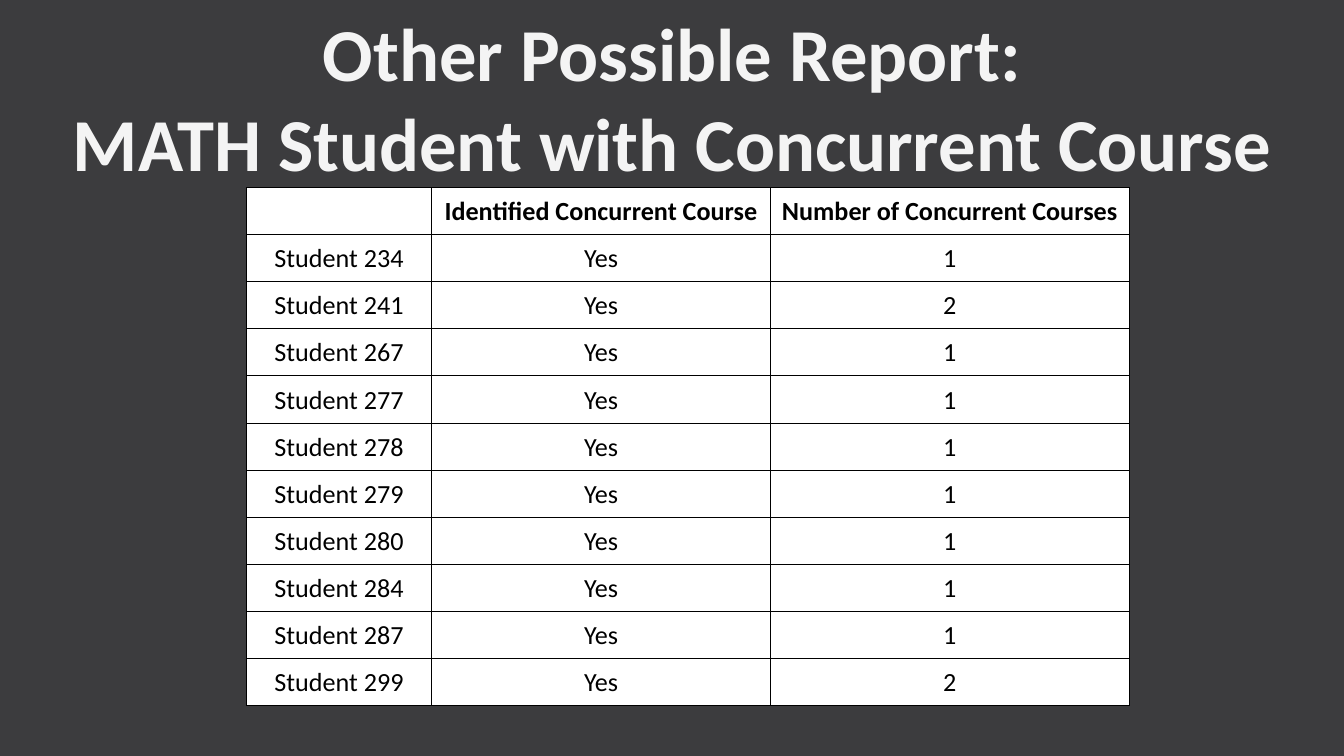
from lxml.etree import SubElement
from pptx import Presentation
from pptx.dml.color import RGBColor
from pptx.enum.text import MSO_ANCHOR, PP_ALIGN
from pptx.oxml.ns import qn
from pptx.util import Inches, Pt

DARK = RGBColor(0x3C, 0x3C, 0x3E)
PALE = RGBColor(0xF4, 0xF4, 0xF4)
WHITE = RGBColor(0xFF, 0xFF, 0xFF)
BLACK = RGBColor(0x00, 0x00, 0x00)

deck = Presentation()
deck.slide_width = Inches(10)
deck.slide_height = deck.slide_width * 9 // 16
X = deck.slide_width / 100   # one percent of the width
Y = deck.slide_height / 100  # one percent of the height

slide = deck.slides.add_slide(deck.slide_layouts[6])
slide.background.fill.solid()
slide.background.fill.fore_color.rgb = DARK


def add_run(para, text, size, color, bold):
    run = para.add_run()
    run.text = text
    run.font.name = "Calibri"
    run.font.size = Pt(size)
    run.font.bold = bold
    run.font.color.rgb = color


def add_border(cell):
    """Draw a thin black line on all four sides of the cell."""
    props = cell._tc.get_or_add_tcPr()
    for i, side in enumerate(("a:lnL", "a:lnR", "a:lnT", "a:lnB")):
        line = SubElement(props, qn(side), w=str(Pt(0.5)))
        fill = SubElement(line, qn("a:solidFill"))
        SubElement(fill, qn("a:srgbClr"), val=str(BLACK))
        props.remove(line)
        props.insert(i, line)  # lines come before the fill


# Title
box = slide.shapes.add_textbox(int(0.85 * X), int(4.45 * Y), int(98.3 * X), int(16.7 * Y))
frame = box.text_frame
frame.word_wrap = True
frame.vertical_anchor = MSO_ANCHOR.MIDDLE
para = frame.paragraphs[0]
para.alignment = PP_ALIGN.CENTER
add_run(para, "Other Possible Report:", 40, PALE, True)
para.add_line_break()
add_run(para, "MATH Student with Concurrent Course", 40, PALE, True)

# Table
counts = {234: 1, 241: 2, 267: 1, 277: 1, 278: 1,
          279: 1, 280: 1, 284: 1, 287: 1, 299: 2}
rows = [("", "Identified Concurrent Course", "Number of Concurrent Courses")]
rows += [(f"Student {num}", "Yes", str(count)) for num, count in counts.items()]
widths = [13.8, 25.2, 26.7]
height = 6.23

table = slide.shapes.add_table(
    len(rows), len(widths), int(18.33 * X), int(24.8 * Y),
    int(sum(widths) * X), int(len(rows) * height * Y)).table
for col, width in zip(table.columns, widths):
    col.width = int(width * X)

for r, texts in enumerate(rows):
    table.rows[r].height = int(height * Y)
    for c, text in enumerate(texts):
        cell = table.cell(r, c)
        cell.fill.solid()
        cell.fill.fore_color.rgb = WHITE
        cell.margin_left = cell.margin_right = cell.margin_top = Inches(0.01)
        cell.margin_bottom = 0
        cell.vertical_anchor = MSO_ANCHOR.MIDDLE
        add_border(cell)
        if text:
            para = cell.text_frame.paragraphs[0]
            para.alignment = PP_ALIGN.CENTER
            add_run(para, text, 14, BLACK, r == 0)

deck.save("out.pptx")
